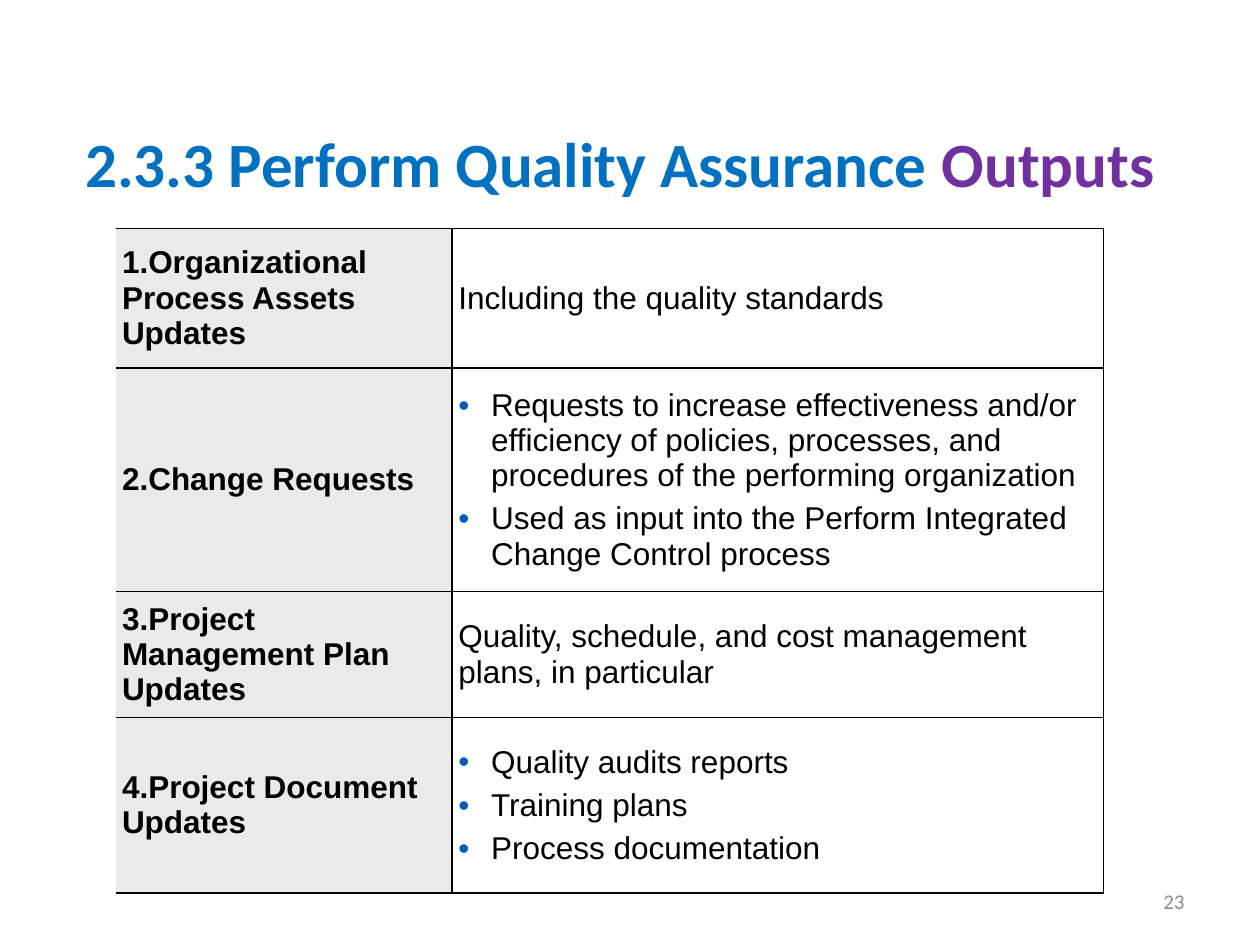
from lxml import etree
from pptx import Presentation
from pptx import util as u
from pptx.dml.color import RGBColor
from pptx.enum import text
from pptx.oxml import ns

THEME = {
    "title": "0070C0", "accent": "7030A0", "ink": "000000", "label_fill": "EAEAEA",
    "bullet": "005CB8", "number": "8C8C8C",
    "head_font": "Calibri", "body_font": "Arial",
    "title_size": 36, "body_size": 18, "number_size": 12,
}
TITLE = [("2.3.3 Perform Quality Assurance ", "title"), ("Outputs", "accent")]
PAGE = "23"
ROWS = [
    ("1.Organizational Process Assets Updates", 2.82, False,
     ["Including the quality standards"]),
    ("2.Change Requests", 4.5, True,
     ["Requests to increase effectiveness and/or efficiency of policies, processes, "
      "and procedures of the performing organization",
      "Used as input into the Perform Integrated Change Control process"]),
    ("3.Project Management Plan Updates", 2.39, False,
     ["Quality, schedule, and cost management plans, in particular"]),
    ("4.Project Document Updates", 3.53, True,
     ["Quality audits reports", "Training plans", "Process documentation"]),
]
COLS = [6.78, 13.13]
LEFT, TOP = 2.33, 4.6
INDENT = 0.66
PAD = 0.13


def add_run(p, words, font, size, color, bold=False):
    r = p.add_run()
    r.text = words
    r.font.name = THEME[font]
    r.font.size = u.Pt(THEME[size])
    r.font.color.rgb = RGBColor.from_string(THEME[color])
    r.font.bold = bold


def child(parent, tag, **attrs):
    return etree.SubElement(parent, ns.qn(tag), attrs)


def set_bullet(p):
    pPr = p._p.get_or_add_pPr()
    pPr.set("marL", str(u.Cm(INDENT)))
    pPr.set("indent", str(-u.Cm(INDENT)))
    child(child(pPr, "a:buClr"), "a:srgbClr", val=THEME["bullet"])
    child(pPr, "a:buFont", typeface=THEME["body_font"])
    child(pPr, "a:buChar", char="•")


def set_borders(cell, widths):
    tcPr = cell._tc.get_or_add_tcPr()
    for side, width in zip(("L", "R", "T", "B"), widths):
        ln = child(tcPr, f"a:ln{side}", w=str(u.Pt(width)))
        if width:
            child(child(ln, "a:solidFill"), "a:srgbClr", val=THEME["ink"])
        else:
            child(ln, "a:noFill")


def fill_cell(cell, paragraphs, bold=False, bullets=False):
    cell.margin_left = cell.margin_right = u.Cm(PAD)
    cell.margin_top = cell.margin_bottom = u.Cm(PAD)
    cell.vertical_anchor = text.MSO_ANCHOR.MIDDLE
    tf = cell.text_frame
    for i, words in enumerate(paragraphs):
        p = tf.add_paragraph() if i else tf.paragraphs[0]
        p.space_before = u.Pt(THEME["body_size"] / 4)
        if bullets:
            set_bullet(p)
        add_run(p, words, "body_font", "body_size", "ink", bold)


def add_title(s):
    sp = s.shapes.title
    sp.left, sp.top, sp.width, sp.height = u.Cm(0.43), u.Cm(2.74), u.Cm(24.13), u.Cm(1.27)
    tf = sp.text_frame
    tf.word_wrap = True
    tf.auto_size = text.MSO_AUTO_SIZE.NONE
    tf.vertical_anchor = text.MSO_ANCHOR.MIDDLE
    p = tf.paragraphs[0]
    p.alignment = text.PP_ALIGN.CENTER
    p.line_spacing = 0.9
    for words, color in TITLE:
        add_run(p, words, "head_font", "title_size", color, True)


def add_outputs(s):
    frame = s.shapes.add_table(len(ROWS), len(COLS), u.Cm(LEFT), u.Cm(TOP),
                               u.Cm(sum(COLS)), u.Cm(sum(row[1] for row in ROWS)))
    table = frame.table
    table.first_row = table.horz_banding = False
    for col, width in zip(table.columns, COLS):
        col.width = u.Cm(width)
    for i, (label, height, bullets, details) in enumerate(ROWS):
        table.rows[i].height = u.Cm(height)
        left, right = table.cell(i, 0), table.cell(i, 1)
        top = 1 if i else 0.5
        set_borders(left, (0, 1, top, 1))
        set_borders(right, (1, 0.5, top, 1))
        left.fill.solid()
        left.fill.fore_color.rgb = RGBColor.from_string(THEME["label_fill"])
        right.fill.background()
        fill_cell(left, [label], bold=True)
        fill_cell(right, details, bullets=bullets)


def add_page_number(s):
    sp = s.shapes.add_textbox(u.Cm(18.21), u.Cm(17.65), u.Cm(5.92), u.Cm(1.02))
    tf = sp.text_frame
    tf.word_wrap = True
    tf.vertical_anchor = text.MSO_ANCHOR.MIDDLE
    p = tf.paragraphs[0]
    p.alignment = text.PP_ALIGN.RIGHT
    add_run(p, PAGE, "head_font", "number_size", "number")


def main():
    prs = Presentation()
    prs.slide_width, prs.slide_height = u.Cm(25.4), u.Cm(19.05)
    s = prs.slides.add_slide(prs.slide_layouts[5])
    add_page_number(s)
    add_title(s)
    add_outputs(s)
    prs.save("out.pptx")


if __name__ == "__main__":
    main()
